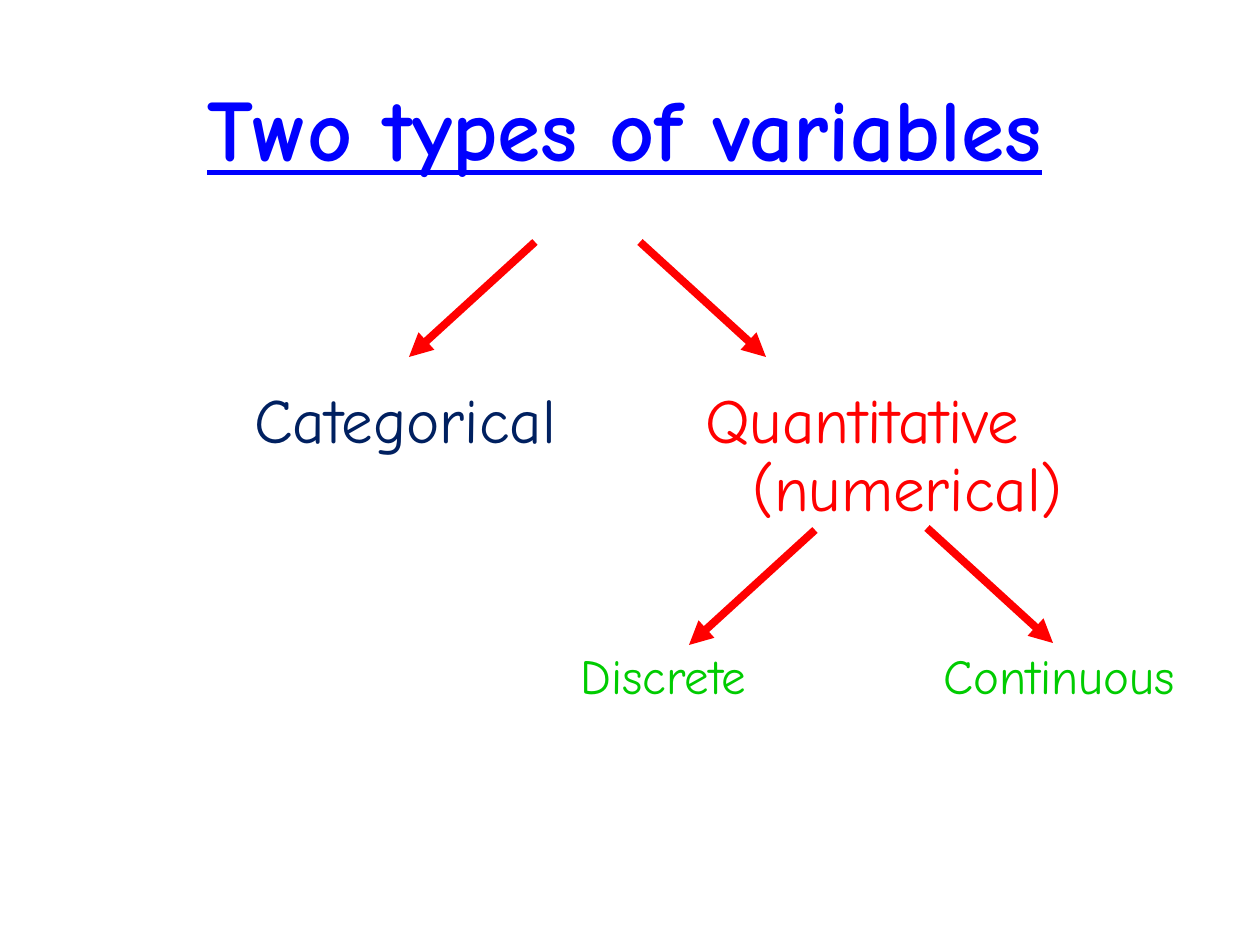
from lxml import etree
from pptx import Presentation
from pptx.dml.color import RGBColor
from pptx.enum.shapes import MSO_CONNECTOR as Connector
from pptx.enum.text import MSO_ANCHOR as Anchor, MSO_AUTO_SIZE as AutoSize, PP_ALIGN as Align
from pptx.oxml.ns import qn
from pptx.util import Emu, Pt

EMU_PER_PX = 914400 / 126
FONT = "Comic Neue"
COLORS = {
    "title": "0000FF",
    "categorical": "002060",
    "quantitative": "FF0000",
    "kind": "00CC00",
    "arrow": "FF0000",
}
HANGING = 47  # hanging indent of the labels
ARROW_RUN, ARROW_DROP = 126, 115


def px(length):
    return Emu(round(length * EMU_PER_PX))


def add_text(page, text, place, size, color):
    box = page.shapes.add_textbox(*map(px, place))
    frame = box.text_frame
    frame.word_wrap = True
    frame.text = text
    para = frame.paragraphs[0]
    font = para.runs[0].font
    font.name = FONT
    font.size = Pt(size)
    font.color.rgb = RGBColor.from_string(COLORS[color])
    return frame, para


def add_title(page, text, place):
    frame, para = add_text(page, text, place, 50, "title")
    frame.vertical_anchor = Anchor.MIDDLE
    para.alignment = Align.CENTER
    font = para.runs[0].font
    font.bold = True
    font.underline = True


def add_label(page, text, place, size, color):
    frame, para = add_text(page, text, place, size, color)
    frame.auto_size = AutoSize.SHAPE_TO_FIT_TEXT
    para.line_spacing = 0.9
    # Hanging indent
    properties = para._p.get_or_add_pPr()
    properties.set("marL", str(px(HANGING)))
    properties.set("indent", str(-px(HANGING)))


def add_arrow(page, x, y, direction):
    """Draw a branch down to the left (-1) or to the right (1)."""
    arrow = page.shapes.add_connector(
        Connector.STRAIGHT, px(x), px(y),
        px(x + direction * ARROW_RUN), px(y + ARROW_DROP))
    arrow.line.color.rgb = RGBColor.from_string(COLORS["arrow"])
    arrow.line.width = Pt(4.5)
    # Arrowhead, and no shadow
    etree.SubElement(arrow.line._get_or_add_ln(), qn("a:tailEnd"), type="triangle")
    etree.SubElement(arrow._element.spPr, qn("a:effectLst"))


def main():
    deck = Presentation()
    deck.slide_width, deck.slide_height = px(1260), px(945)
    page = deck.slides.add_slide(deck.slide_layouts[6])

    add_title(page, "Two types of variables", (84, 53, 1081, 147))

    # Branches: from the title, then from the quantitative type
    for x, y, direction in [(535, 242, -1), (640, 242, 1),
                            (815, 530, -1), (927, 528, 1)]:
        add_arrow(page, x, y, direction)

    # Types of variables
    add_label(page, "Categorical", (242, 383, 431, 81), 36, "categorical")
    add_label(page, "Quantitative (numerical)", (693, 383, 431, 150), 36, "quantitative")

    # Kinds of quantitative variables
    add_label(page, "Discrete", (568, 646, 262, 66), 28, "kind")
    add_label(page, "Continuous", (931, 646, 284, 66), 28, "kind")

    deck.save("out.pptx")


if __name__ == "__main__":
    main()
